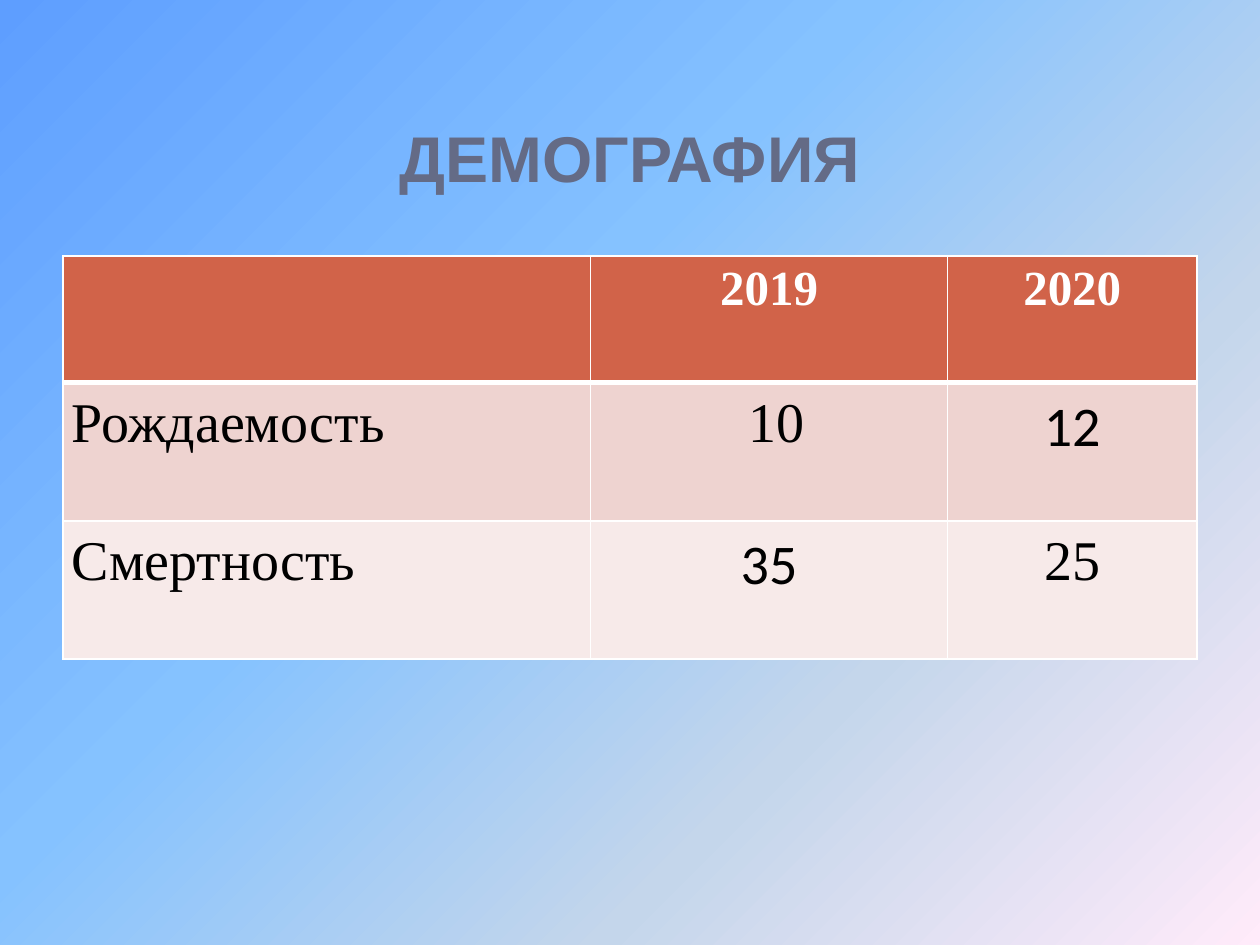
from pptx import Presentation
from pptx import util as u
from pptx.dml import color
from pptx.enum import text
from pptx.oxml import ns, parse_xml

Pt = u.Pt
SERIF, SANS = "Times New Roman", "Calibri"
MID, JUST = text.PP_ALIGN.CENTER, text.PP_ALIGN.JUSTIFY


def rgb(code):
    return color.RGBColor.from_string(code)


class Deck:
    head, ink, white = "D16349", "000000", "FFFFFF"
    bands = ("EED3D0", "F7EAE9")

    def __init__(self, wide, high):
        self.prs = Presentation()
        self.prs.slide_width, self.prs.slide_height = Pt(wide), Pt(high)
        self.slide = self.prs.slides.add_slide(self.prs.slide_layouts[6])

    def back(self, stops, angle):
        fill = self.slide.background.fill
        fill.gradient()
        fill.gradient_angle = angle
        ramp = self.slide.element.find(".//" + ns.qn("a:gsLst"))
        for old in list(ramp):
            ramp.remove(old)
        for pos, code in stops:
            ramp.append(parse_xml(
                f'<a:gs {ns.nsdecls("a")} pos="{pos * 1000}">'
                f'<a:srgbClr val="{code}"/></a:gs>'))

    def label(self, frame, words, face, size, code, bold=False, align=MID):
        frame.text = words
        para = frame.paragraphs[0]
        para.alignment = align
        for run in para.runs:
            font = run.font
            font.name, font.size, font.bold = face, Pt(size), bold
            font.color.rgb = rgb(code)
        return para

    def title(self, words, x, y, w, h):
        frame = self.slide.shapes.add_textbox(Pt(x), Pt(y), Pt(w), Pt(h)).text_frame
        frame.word_wrap = True
        frame.margin_bottom = 0
        frame.vertical_anchor = text.MSO_ANCHOR.BOTTOM
        self.label(frame, words, "Arial", 36.9, "646B86", bold=True)

    def edge(self, cell, base):
        props = cell._tc.get_or_add_tcPr()
        widths = {"L": 1, "R": 1, "T": 1, "B": base}
        for i, (side, width) in enumerate(widths.items()):
            props.insert(i, parse_xml(
                f'<a:ln{side} {ns.nsdecls("a")} w="{Pt(width)}"><a:solidFill>'
                f'<a:srgbClr val="{self.white}"/></a:solidFill></a:ln{side}>'))

    def table(self, rows, x, y, cols, highs):
        grid = self.slide.shapes.add_table(
            len(rows), len(cols), Pt(x), Pt(y), Pt(sum(cols)), Pt(sum(highs))).table
        for col, width in zip(grid.columns, cols):
            col.width = Pt(width)
        for r, (row, high) in enumerate(zip(rows, highs)):
            grid.rows[r].height = Pt(high)
            for c, (words, face) in enumerate(row):
                cell = grid.cell(r, c)
                cell.fill.solid()
                cell.fill.fore_color.rgb = rgb(self.bands[(r - 1) % 2] if r else self.head)
                self.edge(cell, 1 if r else 3)
                if r == 0:
                    self.label(cell.text_frame, words, face, 28, self.white, bold=True)
                    continue
                cell.margin_left = cell.margin_right = Pt(5)
                cell.margin_top = cell.margin_bottom = 0
                para = self.label(cell.text_frame, words, face, 32, self.ink,
                                  align=MID if c else JUST)
                para.line_spacing = 1.15


deck = Deck(720, 540)

# Background
deck.back([(0, "5E9EFF"), (40, "85C2FF"), (70, "C4D6EB"), (100, "FFEBFA")], 315)

# Title
deck.title("ДЕМОГРАФИЯ", 36, 21.6, 648, 90)

# Birth and death figures
deck.table([
    [("", SERIF), ("2019", SERIF), ("2020", SERIF)],
    [("Рождаемость", SERIF), (" 10", SERIF), ("12", SANS)],
    [("Смертность", SERIF), ("35", SANS), ("25", SERIF)],
], 36, 146.2, (301.5, 204, 142.5), (72.5, 79, 79))

deck.prs.save("out.pptx")
